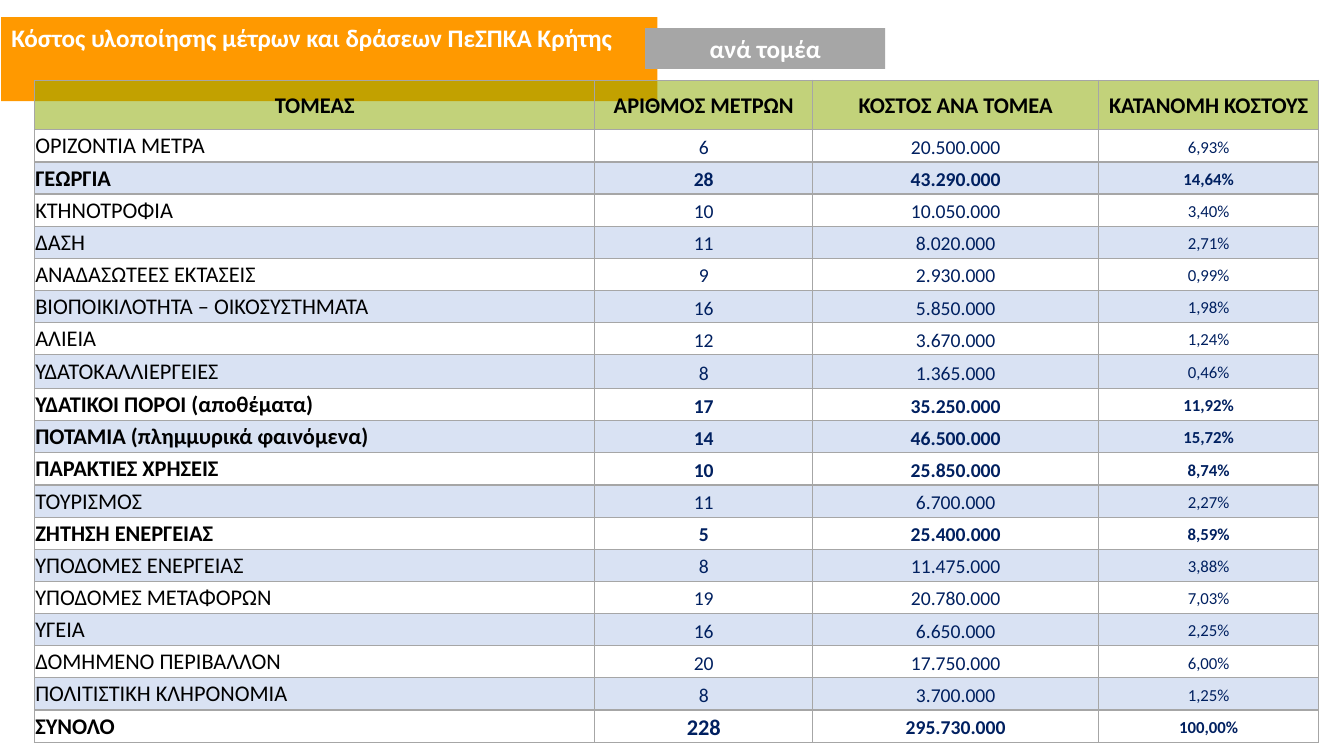
from lxml.etree import SubElement, fromstring
from pptx import Presentation
from pptx.dml.color import RGBColor
from pptx.enum.shapes import MSO_SHAPE
from pptx.enum.text import MSO_ANCHOR, MSO_AUTO_SIZE, PP_ALIGN as Align
from pptx.oxml.ns import nsdecls, qn
from pptx.util import Cm, Pt

ORANGE = RGBColor(0xFF, 0x99, 0x00)
GRAY = RGBColor(0xA6, 0xA6, 0xA6)
GREEN = RGBColor(0x8B, 0xAA, 0x00)
BLUE = RGBColor(0x44, 0x72, 0xC4)
NAVY = RGBColor(0x00, 0x20, 0x60)
BLACK = RGBColor(0x00, 0x00, 0x00)
WHITE = RGBColor(0xFF, 0xFF, 0xFF)
FONT = "Calibri"

HEADINGS = ("ΤΟΜΕΑΣ", "ΑΡΙΘΜΟΣ ΜΕΤΡΩΝ", "ΚΟΣΤΟΣ ΑΝΑ ΤΟΜΕΑ", "ΚΑΤΑΝΟΜΗ ΚΟΣΤΟΥΣ")
SECTORS = (
    ("ΟΡΙΖΟΝΤΙΑ ΜΕΤΡΑ", "6", "20.500.000", "6,93%"),
    ("ΓΕΩΡΓΙΑ", "28", "43.290.000", "14,64%"),
    ("ΚΤΗΝΟΤΡΟΦΙΑ", "10", "10.050.000", "3,40%"),
    ("ΔΑΣΗ", "11", "8.020.000", "2,71%"),
    ("ΑΝΑΔΑΣΩΤΕΕΣ ΕΚΤΑΣΕΙΣ", "9", "2.930.000", "0,99%"),
    ("ΒΙΟΠΟΙΚΙΛΟΤΗΤΑ – ΟΙΚΟΣΥΣΤΗΜΑΤΑ", "16", "5.850.000", "1,98%"),
    ("ΑΛΙΕΙΑ", "12", "3.670.000", "1,24%"),
    ("ΥΔΑΤΟΚΑΛΛΙΕΡΓΕΙΕΣ", "8", "1.365.000", "0,46%"),
    ("ΥΔΑΤΙΚΟΙ ΠΟΡΟΙ (αποθέματα)", "17", "35.250.000", "11,92%"),
    ("ΠΟΤΑΜΙΑ (πλημμυρικά φαινόμενα)", "14", "46.500.000", "15,72%"),
    ("ΠΑΡΑΚΤΙΕΣ ΧΡΗΣΕΙΣ", "10", "25.850.000", "8,74%"),
    ("ΤΟΥΡΙΣΜΟΣ", "11", "6.700.000", "2,27%"),
    ("ΖΗΤΗΣΗ ΕΝΕΡΓΕΙΑΣ", "5", "25.400.000", "8,59%"),
    ("ΥΠΟΔΟΜΕΣ ΕΝΕΡΓΕΙΑΣ", "8", "11.475.000", "3,88%"),
    ("ΥΠΟΔΟΜΕΣ ΜΕΤΑΦΟΡΩΝ", "19", "20.780.000", "7,03%"),
    ("ΥΓΕΙΑ", "16", "6.650.000", "2,25%"),
    ("ΔΟΜΗΜΕΝΟ ΠΕΡΙΒΑΛΛΟΝ", "20", "17.750.000", "6,00%"),
    ("ΠΟΛΙΤΙΣΤΙΚΗ ΚΛΗΡΟΝΟΜΙΑ", "8", "3.700.000", "1,25%"),
    ("ΣΥΝΟΛΟ", "228", "295.730.000", "100,00%"),
)
BOLD_ROWS = {2, 9, 10, 11, 13, len(SECTORS)}
TALL_ROW = 8
COLUMN_WIDTHS = (14.12, 5.49, 7.21, 5.54)
COLUMN_SIZES = (16, 14, 14, 12)


def set_font(para, size, color, bold):
    font = para.font
    font.name, font.size, font.bold = FONT, Pt(size), bold
    font.color.rgb = color


def style_banner(box, text, place, color, align):
    box.left, box.top, box.width, box.height = (Cm(length) for length in place)
    box.fill.solid()
    box.fill.fore_color.rgb = color
    frame = box.text_frame
    frame.text = text
    frame.word_wrap = True
    frame.auto_size = MSO_AUTO_SIZE.SHAPE_TO_FIT_TEXT
    frame.vertical_anchor = MSO_ANCHOR.TOP
    para = frame.paragraphs[0]
    para.alignment = align
    para.line_spacing = 1.0
    para.space_before = Pt(0)
    set_font(para, 18, WHITE, True)


def add_borders(cell):
    properties = cell._tc.get_or_add_tcPr()
    for index, side in enumerate(("lnL", "lnR", "lnT", "lnB")):
        properties.insert(index, fromstring(
            f'<a:{side} {nsdecls("a")} w="{Pt(1)}"><a:solidFill>'
            f'<a:srgbClr val="{GRAY}"/></a:solidFill></a:{side}>'))


def tint_cell(cell, color, opacity):
    """Fill the cell with a colour at the given opacity in percent."""
    cell.fill.solid()
    cell.fill.fore_color.rgb = color
    rgb = cell._tc.tcPr.find(qn("a:solidFill")).find(qn("a:srgbClr"))
    SubElement(rgb, qn("a:alpha"), val=str(opacity * 1000))


def write_cell(cell, text, row, column):
    is_header = row == 0
    is_figure = not is_header and column > 0
    cell.text = text
    cell.vertical_anchor = MSO_ANCHOR.MIDDLE
    cell.margin_left = cell.margin_right = Cm(0.18 if is_figure else 0.02)
    cell.margin_top = Cm(0 if is_figure else 0.02)
    cell.margin_bottom = 0
    para = cell.text_frame.paragraphs[0]
    para.alignment = Align.CENTER if is_header or is_figure else Align.LEFT
    if is_figure:
        para.line_spacing = 1.15
        para.space_before = para.space_after = Pt(3)
    is_grand_count = row == len(SECTORS) and column == 1
    size = 16 if is_header or is_grand_count else COLUMN_SIZES[column]
    set_font(para, size, NAVY if is_figure else BLACK,
             is_header or row in BOLD_ROWS)
    if is_header:
        tint_cell(cell, GREEN, 52)
    elif row % 2 == 0:
        tint_cell(cell, BLUE, 20)
    else:
        cell.fill.background()
    add_borders(cell)


def add_cost_table(page):
    rows = (HEADINGS,) + SECTORS
    table = page.shapes.add_table(len(rows), len(HEADINGS), Cm(0.87), Cm(2.03),
                                  Cm(sum(COLUMN_WIDTHS)), Cm(16.61)).table
    table.first_row = table.horz_banding = False
    for column, width in zip(table.columns, COLUMN_WIDTHS):
        column.width = Cm(width)
    for row, texts in enumerate(rows):
        table.rows[row].height = Cm({0: 1.24, TALL_ROW: 0.85}.get(row, 0.81))
        for column, text in enumerate(texts):
            write_cell(table.cell(row, column), text, row, column)


def main():
    deck = Presentation()
    deck.slide_width, deck.slide_height = Cm(33.87), Cm(19.05)
    page = deck.slides.add_slide(deck.slide_layouts[5])
    style_banner(page.shapes.title,
                 "Κόστος υλοποίησης μέτρων και δράσεων ΠεΣΠΚΑ Κρήτης",
                 (0.03, 0.43, 16.54, 1.03), ORANGE, Align.LEFT)
    place = (16.26, 0.71, 6.05, 1.03)
    subtitle = page.shapes.add_shape(MSO_SHAPE.RECTANGLE,
                                     *(Cm(length) for length in place))
    subtitle.shadow.inherit = False
    subtitle.line.fill.background()
    style_banner(subtitle, "ανά τομέα", place, GRAY, Align.CENTER)
    add_cost_table(page)
    deck.save("out.pptx")


if __name__ == "__main__":
    main()
